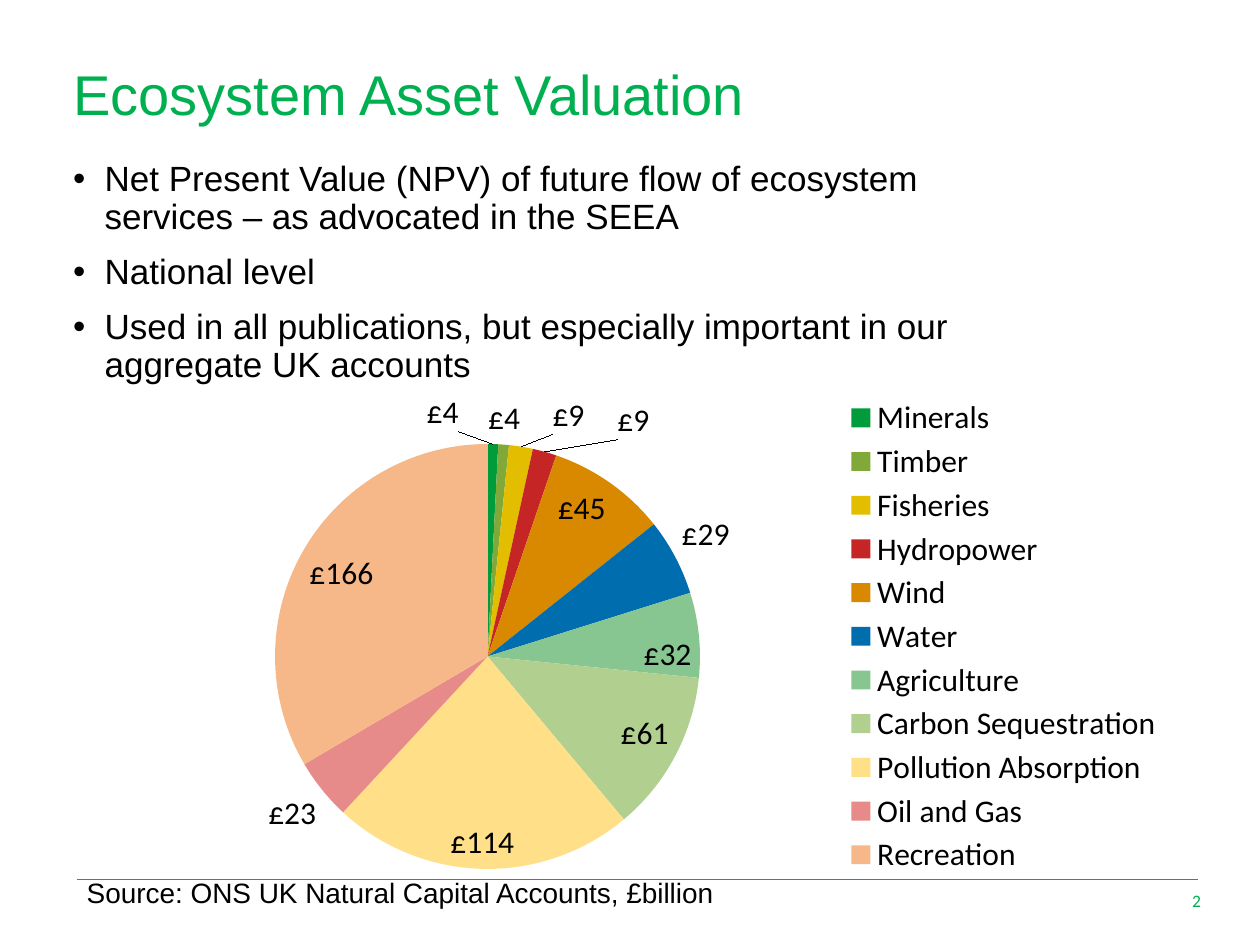
from lxml.etree import SubElement
from pptx import Presentation
from pptx.chart.data import CategoryChartData
from pptx.dml.color import RGBColor
from pptx.enum.chart import XL_CHART_TYPE as ChartType
from pptx.enum.chart import XL_LABEL_POSITION as LabelPosition
from pptx.enum.chart import XL_LEGEND_POSITION as LegendPosition
from pptx.enum.shapes import MSO_CONNECTOR as Connector
from pptx.enum.text import MSO_ANCHOR as Anchor
from pptx.enum.text import MSO_AUTO_SIZE as AutoSize
from pptx.enum.text import PP_ALIGN as Align
from pptx.oxml import parse_xml
from pptx.oxml.ns import nsdecls, qn
from pptx.util import Inches, Pt

GREEN = "00B050"
BLACK = "000000"
INSIDE, OUTSIDE = LabelPosition.INSIDE_END, LabelPosition.OUTSIDE_END
BULLETS = [
    "Net Present Value (NPV) of future flow of ecosystem services – as advocated in the SEEA",
    "National level",
    "Used in all publications, but especially important in our aggregate UK accounts",
]
ASSETS = [
    ("Minerals", 4, "009B3A", OUTSIDE, (-0.05, -0.01)),
    ("Timber", 4, "80A93A", OUTSIDE, None),
    ("Fisheries", 9, "E2BD00", OUTSIDE, (0.03, -0.01)),
    ("Hydropower", 9, "C52625", OUTSIDE, (0.07, -0.01)),
    ("Wind", 45, "D98900", INSIDE, None),
    ("Water", 29, "006DAE", OUTSIDE, None),
    ("Agriculture", 32, "87C690", INSIDE, None),
    ("Carbon Sequestration", 61, "B1D08F", INSIDE, None),
    ("Pollution Absorption", 114, "FFDF87", INSIDE, None),
    ("Oil and Gas", 23, "E78B8A", OUTSIDE, None),
    ("Recreation", 166, "F6B888", INSIDE, None),
]


def color(value):
    """Turn a hex string into a colour."""
    return RGBColor.from_string(value)


def style_font(font, size, name="Arial", value=BLACK):
    """Set the size, typeface and colour of a font."""
    font.size = Pt(size)
    font.name = name
    font.color.rgb = color(value)


def place(shape, box):
    """Move a shape to a box given in inches."""
    shape.left, shape.top, shape.width, shape.height = map(Inches, box)


def add_run(paragraph, text, size, name="Arial", value=BLACK):
    """Add one formatted run to a paragraph."""
    run = paragraph.add_run()
    run.text = text
    style_font(run.font, size, name, value)


def add_title(slide, box, text):
    """Fill the title placeholder."""
    place(slide.shapes.title, box)
    frame = slide.shapes.title.text_frame
    frame.auto_size = AutoSize.NONE
    frame.vertical_anchor = Anchor.MIDDLE
    paragraph = frame.paragraphs[0]
    paragraph.alignment = Align.LEFT
    paragraph.line_spacing = 0.9
    add_run(paragraph, text, 32, value=GREEN)


def add_bullets(slide, box, texts):
    """Fill the body placeholder with a bulleted list."""
    body = slide.placeholders[1]
    place(body, box)
    frame = body.text_frame
    frame.auto_size = AutoSize.NONE
    for index, text in enumerate(texts):
        paragraph = frame.add_paragraph() if index else frame.paragraphs[0]
        paragraph.line_spacing = 0.9
        paragraph.space_before = Pt(10)
        add_run(paragraph, text, 20)
        properties = paragraph._p.get_or_add_pPr()
        properties.set("marL", str(Inches(0.25)))
        properties.set("indent", str(-Inches(0.25)))
        SubElement(properties, qn("a:buFont")).set("typeface", "Arial")
        SubElement(properties, qn("a:buChar")).set("char", "•")


def manual_layout(**values):
    """Build a chart layout from fractions of the chart area."""
    parts = "".join(f'<c:{key} val="{value}"/>' for key, value in values.items())
    return parse_xml(
        f'<c:layout {nsdecls("c")}><c:manualLayout>{parts}</c:manualLayout></c:layout>'
    )


def set_layout(parent, position, **values):
    """Replace the layout of a chart part."""
    for layout in parent.findall(qn("c:layout")):
        parent.remove(layout)
    parent.insert(position, manual_layout(**values))


def add_asset_pie(slide, box, assets):
    """Add the pie chart of asset values with its legend."""
    data = CategoryChartData(number_format='"£"#,##0')
    data.categories = [asset[0] for asset in assets]
    data.add_series("Series 1", [asset[1] for asset in assets])
    chart = slide.shapes.add_chart(ChartType.PIE, *map(Inches, box), data).chart
    chart.has_title = False
    style_font(chart.font, 18, "Calibri")
    chart.has_legend = True
    chart.legend.position = LegendPosition.RIGHT
    chart.legend.include_in_layout = False
    style_font(chart.legend.font, 18, "Calibri")
    set_layout(chart.legend._element, 1, xMode="edge", yMode="edge",
               x=0.67, y=0.02, w=0.32, h=0.96)
    plot = chart.plots[0]
    plot.vary_by_categories = True
    set_layout(plot._element.getparent(), 0, layoutTarget="inner", xMode="edge",
               yMode="edge", x=0.11, y=0.12, w=0.42, h=0.84)
    for index, (_, _, fill, position, offset) in enumerate(assets):
        point = plot.series[0].points[index]
        point.format.fill.solid()
        point.format.fill.fore_color.rgb = color(fill)
        point.format.line.fill.background()
        label = point.data_label
        style_font(label.font, 18, "Calibri")
        label.position = position
        if offset:
            set_layout(label._dLbl, 1, x=offset[0], y=offset[1])


def add_text(slide, box, text, size, name="Arial", value=BLACK,
             align=Align.LEFT, anchor=Anchor.TOP):
    """Add a wrapped text box with a single line of text."""
    frame = slide.shapes.add_textbox(*map(Inches, box)).text_frame
    frame.word_wrap = True
    frame.vertical_anchor = anchor
    frame.paragraphs[0].alignment = align
    add_run(frame.paragraphs[0], text, size, name, value)


def add_footer(slide, box):
    """Add the footer rule, the source and the page number."""
    left, top, width, _ = box
    ends = map(Inches, (left, top, left + width, top))
    rule = slide.shapes.add_connector(Connector.STRAIGHT, *ends)
    rule.line.color.rgb = color("00AF41")
    rule.line.width = Pt(0.5)
    SubElement(rule._element.spPr, qn("a:effectLst"))
    add_text(slide, (9.18, 6.95, 0.45, 0.4), "2", 10, "Calibri", GREEN,
             Align.RIGHT, Anchor.MIDDLE)
    add_text(slide, (0.59, 6.9, 7.56, 0.37),
             "Source: ONS UK Natural Capital Accounts, £billion", 16)


def main():
    """Build and save the presentation."""
    presentation = Presentation()
    presentation.slide_width = Inches(10)
    presentation.slide_height = Inches(7.5)
    slide = presentation.slides.add_slide(presentation.slide_layouts[1])
    add_title(slide, (0.48, 0.51, 9.04, 0.53), "Ecosystem Asset Valuation")
    add_bullets(slide, (0.48, 1.23, 7.98, 5.53), BULLETS)
    add_asset_pie(slide, (1.3, 3.04, 8.03, 4.02), ASSETS)
    add_footer(slide, (0.61, 6.98, 8.9, 0.4))
    presentation.save("out.pptx")


if __name__ == "__main__":
    main()
